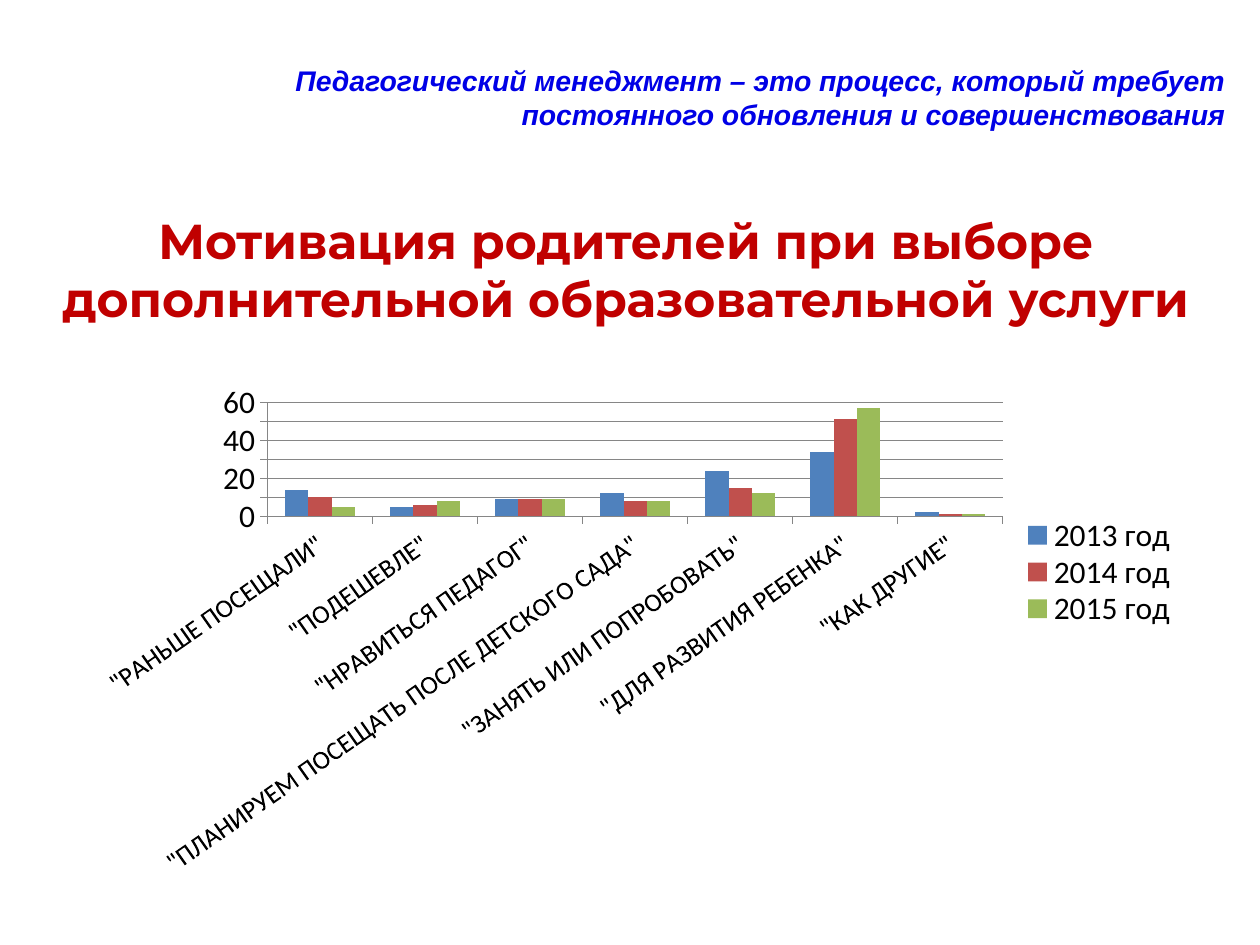
"""Build a slide on what motivates parents to choose extra educational services."""
from lxml.etree import SubElement
from pptx import Presentation
from pptx.chart.data import CategoryChartData
from pptx.dml.color import RGBColor
from pptx.enum.chart import XL_CHART_TYPE, XL_LEGEND_POSITION, XL_TICK_MARK
from pptx.enum.text import MSO_ANCHOR, MSO_AUTO_SIZE, PP_ALIGN
from pptx.oxml import parse_xml
from pptx.oxml.ns import nsdecls, qn
from pptx.util import Pt

BLUE_TEXT = RGBColor(0x00, 0x00, 0xE6)
RED_TEXT = RGBColor(0xC0, 0x00, 0x00)
BLACK = RGBColor(0x00, 0x00, 0x00)
GRID_GRAY = RGBColor(0x86, 0x86, 0x86)

REASONS = [
    '"РАНЬШЕ ПОСЕЩАЛИ"',
    '"ПОДЕШЕВЛЕ"',
    '"НРАВИТЬСЯ ПЕДАГОГ"',
    '"ПЛАНИРУЕМ ПОСЕЩАТЬ ПОСЛЕ ДЕТСКОГО САДА"',
    '"ЗАНЯТЬ ИЛИ ПОПРОБОВАТЬ"',
    '"ДЛЯ РАЗВИТИЯ РЕБЕНКА"',
    '"КАК ДРУГИЕ"',
]
YEARS = [
    ("2013 год", (14, 5, 9, 12, 24, 34, 2), RGBColor(0x4F, 0x81, 0xBD)),
    ("2014 год", (10, 6, 9, 8, 15, 51, 1), RGBColor(0xC0, 0x50, 0x4D)),
    ("2015 год", (5, 8, 9, 8, 12, 57, 1), RGBColor(0x9B, 0xBB, 0x59)),
]


def manual_layout(x, y, w, h, inner=False):
    """Return a chart layout element in fractions of the chart frame."""
    layout = parse_xml(f"<c:layout {nsdecls('c')}><c:manualLayout/></c:layout>")
    settings = [("layoutTarget", "inner")] if inner else []
    settings += [("xMode", "edge"), ("yMode", "edge"), ("x", x), ("y", y), ("w", w), ("h", h)]
    for tag, value in settings:
        SubElement(layout[0], qn(f"c:{tag}")).set("val", str(value))
    return layout


class SlideBuilder:
    """Hold the slide and its style, with a method for each kind of element."""

    def __init__(self, slide, chart_font="Calibri", chart_size=18):
        self.slide = slide
        self.chart_font = chart_font
        self.chart_size = chart_size

    def fill_text(self, frame, text, font_name, size, color, align, italic=False):
        """Fill a text frame with one bold paragraph."""
        frame.word_wrap = True
        frame.text = text
        paragraph = frame.paragraphs[0]
        paragraph.alignment = align
        for run in paragraph.runs:
            run.font.name = font_name
            run.font.size = Pt(size)
            run.font.bold = True
            run.font.italic = italic
            run.font.color.rgb = color

    def title(self, text, left, top, width, height):
        """Place and format the title placeholder."""
        motto = self.slide.shapes.title
        motto.left, motto.top, motto.width, motto.height = map(Pt, (left, top, width, height))
        frame = motto.text_frame
        frame.auto_size = MSO_AUTO_SIZE.NONE
        frame.vertical_anchor = MSO_ANCHOR.MIDDLE
        frame.margin_top = Pt(12)
        self.fill_text(frame, text, "Arial", 16.2, BLUE_TEXT, PP_ALIGN.RIGHT, italic=True)

    def heading(self, text, left, top, width, height):
        """Add the centred heading above the chart."""
        heading = self.slide.shapes.add_textbox(*map(Pt, (left, top, width, height)))
        self.fill_text(heading.text_frame, text, "Montserrat", 28, RED_TEXT, PP_ALIGN.CENTER)

    def column_chart(self, categories, series, left, top, width, height):
        """Add the clustered column chart with its axes and legend."""
        data = CategoryChartData()
        data.categories = categories
        for name, values, _ in series:
            data.add_series(name, values)
        chart = self.slide.shapes.add_chart(
            XL_CHART_TYPE.COLUMN_CLUSTERED, *map(Pt, (left, top, width, height)), data
        ).chart
        chart.has_title = False
        chart.font.name = self.chart_font
        chart.font.size = Pt(self.chart_size)
        chart.font.color.rgb = BLACK

        plot = chart.plots[0]
        plot.gap_width = 150
        plot.overlap = 0
        plot.vary_by_categories = False
        for columns, (_, _, color) in zip(plot.series, series):
            columns.format.fill.solid()
            columns.format.fill.fore_color.rgb = color
        self.axes(chart)
        self.legend(chart)

        plot_area = chart._chartSpace.chart.plotArea
        for layout in plot_area.findall(qn("c:layout")):
            plot_area.remove(layout)
        plot_area.insert(0, manual_layout(0.18, 0.03, 0.65, 0.23, inner=True))

    def axes(self, chart):
        """Format the axes, gridlines and slanted category labels."""
        reasons, share = chart.category_axis, chart.value_axis
        for axis in (reasons, share):
            axis.major_tick_mark = XL_TICK_MARK.OUTSIDE
            axis.format.line.color.rgb = GRID_GRAY
        share.minimum_scale, share.maximum_scale, share.major_unit = 0, 60, 10
        share.has_major_gridlines = True
        share.major_gridlines.format.line.color.rgb = GRID_GRAY
        labels = reasons.tick_labels.font
        labels.name, labels.size = self.chart_font, Pt(15)
        labels.color.rgb = BLACK
        body = reasons._element.find(qn("c:txPr")).find(qn("a:bodyPr"))
        body.set("rot", str(-35 * 60000))
        body.set("vert", "horz")

    def legend(self, chart):
        """Place the legend to the right of the plot."""
        chart.has_legend = True
        chart.legend.position = XL_LEGEND_POSITION.RIGHT
        chart.legend.include_in_layout = False
        position = chart.legend._element.find(qn("c:legendPos"))
        position.addnext(manual_layout(0.84, 0.26, 0.15, 0.22))


def main():
    """Create the presentation and save it."""
    presentation = Presentation()
    presentation.slide_width, presentation.slide_height = Pt(720), Pt(540)
    builder = SlideBuilder(presentation.slides.add_slide(presentation.slide_layouts[5]))
    builder.title(
        "Педагогический менеджмент – это процесс, который требует "
        "постоянного обновления и совершенствования",
        150.5, 15, 556.5, 73,
    )
    builder.heading(
        "Мотивация родителей при выборе дополнительной образовательной услуги",
        14.5, 116.5, 686, 75,
    )
    builder.column_chart(REASONS, YEARS, 36.5, 219, 646.5, 286)
    presentation.save("out.pptx")


if __name__ == "__main__":
    main()
